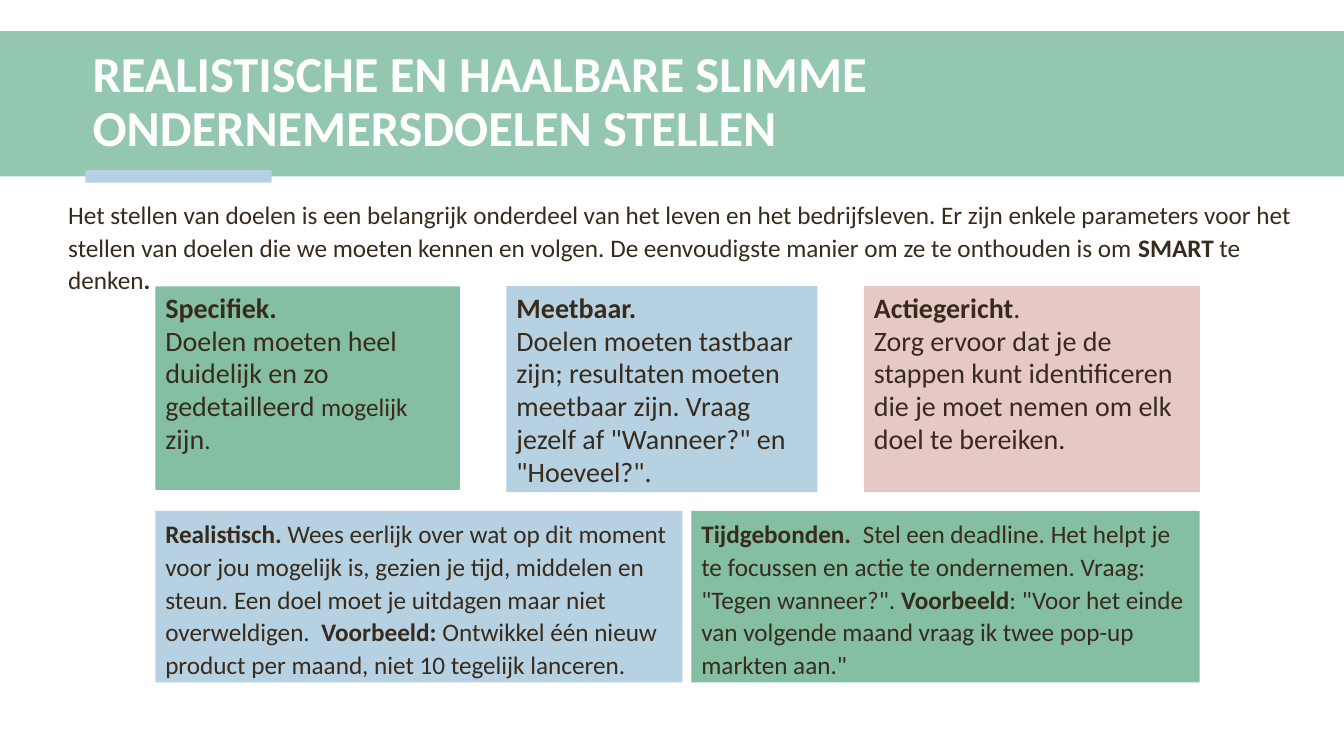
from pptx import Presentation
from pptx.dml.color import RGBColor
from pptx.enum.shapes import MSO_SHAPE
from pptx.enum.text import MSO_ANCHOR, MSO_AUTO_SIZE, PP_ALIGN
from pptx.util import Pt
from lxml import etree

RECTANGLE = MSO_SHAPE.RECTANGLE
TOP, MIDDLE = MSO_ANCHOR.TOP, MSO_ANCHOR.MIDDLE
NO_FIT = MSO_AUTO_SIZE.NONE
LEFT = PP_ALIGN.LEFT

FONT = "Calibri"
WHITE, BROWN = "FFFFFF", "382B1B"
BAND_GREEN, GREEN, BLUE, PINK = "94C7B0", "84BFA4", "B6D1E1", "E6C8C7"
BODY_FORMAT = {"alignment": LEFT, "line_spacing": Pt(23.4), "space_before": Pt(0)}
TITLE_FORMAT = {"alignment": LEFT, "line_spacing": 0.9, "space_before": Pt(10)}

TITLE = "REALISTISCHE EN HAALBARE SLIMME ONDERNEMERSDOELEN STELLEN"

# Paragraphs are lists of runs: (text, size, bold)
INTRO = [[
    ("Het stellen van doelen is een belangrijk onderdeel van het leven en het "
     "bedrijfsleven. Er zijn enkele parameters voor het stellen van doelen die we "
     "moeten kennen en volgen. De eenvoudigste manier om ze te onthouden is om ", 18, False),
    ("SMART ", 18, True), ("te denken", 18, False), (".", 18, True)]]

# Cards: (width, height, fill, paragraphs)
TOP_CARDS = [
    (217.5, 145.5, GREEN, [
        [("Specifiek.", 20, True)],
        [("Doelen moeten heel duidelijk en zo gedetailleerd ", 20, False),
         ("mogelijk", 18, False), (" zijn", 20, False), (".", 18, False)]]),
    (222, 147, BLUE, [
        [("Meetbaar.", 20, True)],
        [("Doelen moeten tastbaar zijn; resultaten moeten meetbaar zijn. "
          "Vraag jezelf af \"Wanneer?\" en \"Hoeveel?\".", 20, False)]]),
    (240, 147, PINK, [
        [("Actiegericht", 20, True), (".", 20, False)],
        [("Zorg ervoor dat je de stappen kunt identificeren die je moet nemen "
          "om elk doel te bereiken.", 20, False)]]),
]
BOTTOM_CARDS = [
    (376.5, 122.4, BLUE, [[
        ("Realistisch. ", 18, True),
        ("Wees eerlijk over wat op dit moment voor jou mogelijk is, gezien je tijd, "
         "middelen en steun. Een doel moet je uitdagen maar niet overweldigen.  ", 18, False),
        ("Voorbeeld: ", 18, True),
        ("Ontwikkel één nieuw product per maand, niet 10 tegelijk lanceren.", 18, False)]]),
    (363, 122.4, GREEN, [[
        ("Tijdgebonden.  ", 18, True),
        ("Stel een deadline. Het helpt je te focussen en actie te ondernemen. "
         "Vraag: \"Tegen wanneer?\". ", 18, False),
        ("Voorbeeld", 18, True),
        (": \"Voor het einde van volgende maand vraag ik twee pop-up markten aan.\"",
         18, False)]]),
]


def color(hex_value):
    return RGBColor.from_string(hex_value)


def apply_format(target, values):
    for name, value in values.items():
        setattr(target, name, value)


def place(shape, left, top, width, height):
    apply_format(shape, {"left": Pt(left), "top": Pt(top),
                         "width": Pt(width), "height": Pt(height)})


def add_rectangle(slide, left, top, width, height, fill):
    shape = slide.shapes.add_shape(RECTANGLE, Pt(left), Pt(top), Pt(width), Pt(height))
    shape.shadow.inherit = False
    shape.fill.solid()
    shape.fill.fore_color.rgb = color(fill)
    shape.line.fill.background()
    return shape


def write_text(shape, paragraphs, text_color, paragraph_format, anchor):
    frame = shape.text_frame
    apply_format(frame, {"word_wrap": True, "auto_size": NO_FIT, "vertical_anchor": anchor})
    for index, runs in enumerate(paragraphs):
        paragraph = frame.add_paragraph() if index else frame.paragraphs[0]
        apply_format(paragraph, paragraph_format)
        for text, size, bold in runs:
            run = paragraph.add_run()
            run.text = text
            apply_format(run.font, {"name": FONT, "size": Pt(size), "bold": bold})
            run.font.color.rgb = color(text_color)


def add_header(slide, left, top, width, height):
    """Green band with the title and a blue accent bar on its lower edge."""
    title = slide.shapes.title
    band = add_rectangle(slide, left, top, width, height, BAND_GREEN)
    accent = add_rectangle(slide, left + 61, top + height - 4.5, 133, 9, BLUE)
    # Keep the band and bar behind the title
    for shape in (band, accent):
        title._element.addprevious(shape._element)
    place(title, left + 59, top + 7.2, 883.5, 88.5)
    write_text(title, [[(TITLE, 36, True)]], WHITE, TITLE_FORMAT, MIDDLE)


def add_intro(slide, left, top, width, height):
    """Introduction without bullet or indent."""
    body = slide.placeholders[1]
    place(body, left, top, width, height)
    write_text(body, INTRO, BROWN, BODY_FORMAT, TOP)
    for paragraph in body.text_frame.paragraphs:
        properties = paragraph._p.get_or_add_pPr()
        properties.set("marL", "0")
        properties.set("indent", "0")
        namespace = properties.nsmap["a"]
        etree.SubElement(properties, f"{{{namespace}}}buNone")


def add_card_row(slide, left, top, gap, cards):
    """Cards side by side, separated by one gap."""
    for width, height, fill, paragraphs in cards:
        card = add_rectangle(slide, left, top, width, height, fill)
        write_text(card, paragraphs, BROWN, BODY_FORMAT, TOP)
        left += width + gap


def main():
    presentation = Presentation()
    presentation.slide_width, presentation.slide_height = Pt(960), Pt(540)
    slide = presentation.slides.add_slide(presentation.slide_layouts[1])
    add_header(slide, 0, 22.3, 960, 103.7)
    add_intro(slide, 41.5, 136.8, 896.5, 282)
    add_card_row(slide, 111, 204.5, 33.3, TOP_CARDS)
    add_card_row(slide, 111, 365, 6.4, BOTTOM_CARDS)
    presentation.save("out.pptx")


if __name__ == "__main__":
    main()
